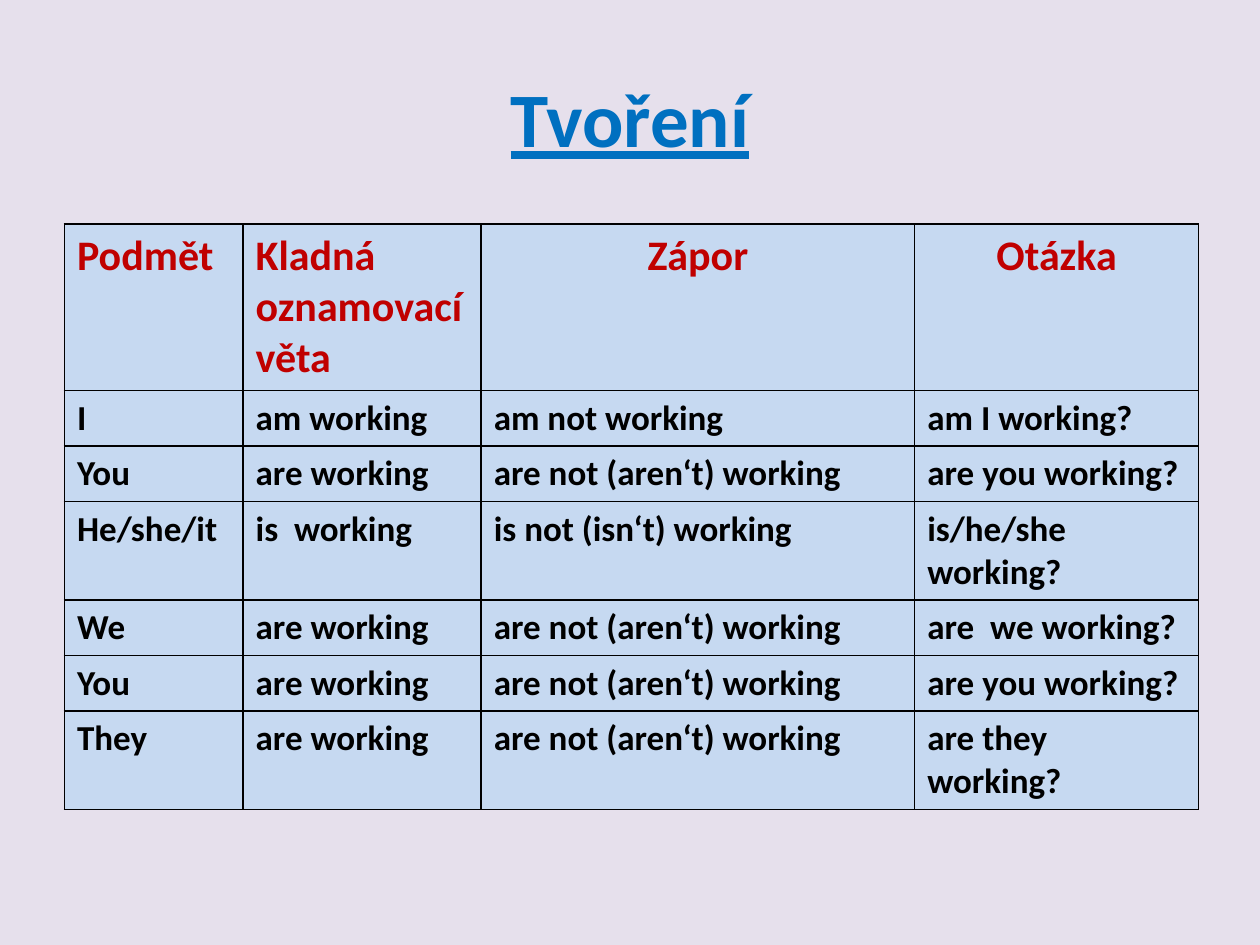
from lxml import etree
from pptx import Presentation
from pptx.dml.color import RGBColor
from pptx.enum import text as t
from pptx.oxml import ns
from pptx.util import Cm, Pt

TITLE = "Tvoření"
HEAD = ["Podmět", "Kladná oznamovací věta", "Zápor", "Otázka"]
BODY = [
    ["I", "am working", "am not working", "am I working?"],
    ["You", "are working", "are not (aren‘t) working", "are you working?"],
    ["He/she/it", "is  working", "is not (isn‘t) working", "is/he/she working?"],
    ["We", "are working", "are not (aren‘t) working", "are  we working?"],
    ["You", "are working", "are not (aren‘t) working", "are you working?"],
    ["They", "are working", "are not (aren‘t) working", "are they working?"],
]
WIDTHS = [3.6, 4.8, 8.74, 5.72]
ROW = 1.04
MID = t.PP_ALIGN.CENTER
LEFT = t.PP_ALIGN.LEFT
ALIGN = [LEFT, LEFT, MID, MID]

BACK = RGBColor(0xE6, 0xE0, 0xEC)
BLUE = RGBColor(0x00, 0x70, 0xC0)
RED = RGBColor(0xC0, 0x00, 0x00)
BLACK = RGBColor(0x00, 0x00, 0x00)
PALE = RGBColor(0xC6, 0xD9, 0xF1)


def write(frame, words, size, color, align):
    par = frame.paragraphs[0]
    par.alignment = align
    run = par.add_run()
    run.text = words
    font = run.font
    font.name, font.size, font.bold = "Calibri", Pt(size), True
    font.color.rgb = color
    return font


def border(cell):
    props = cell._tc.get_or_add_tcPr()
    for side in ("lnL", "lnR", "lnT", "lnB"):
        line = etree.SubElement(props, ns.qn("a:" + side), w=str(Pt(1)))
        fill = etree.SubElement(line, ns.qn("a:solidFill"))
        etree.SubElement(fill, ns.qn("a:srgbClr"), val=str(BLACK))


def add_title(slide):
    title = slide.shapes.title
    title.left, title.top = Cm(1.27), Cm(0.76)
    title.width, title.height = Cm(22.86), Cm(3.18)
    title.text_frame.vertical_anchor = t.MSO_ANCHOR.MIDDLE
    write(title.text_frame, TITLE, 44, BLUE, MID).underline = True


def add_forms(slide):
    rows = [HEAD] + BODY
    table = slide.shapes.add_table(
        len(rows), len(HEAD), Cm(1.3), Cm(4.52),
        Cm(sum(WIDTHS)), Cm(ROW * len(rows))).table
    for col, width in zip(table.columns, WIDTHS):
        col.width = Cm(width)
    for r, row in enumerate(rows):
        table.rows[r].height = Cm(ROW)
        for c, words in enumerate(row):
            cell = table.cell(r, c)
            border(cell)
            cell.fill.solid()
            cell.fill.fore_color.rgb = PALE
            if r == 0:
                write(cell.text_frame, words, 24, RED, ALIGN[c])
            else:
                write(cell.text_frame, words, 20, BLACK, LEFT)


def main():
    deck = Presentation()
    deck.slide_width, deck.slide_height = Cm(25.4), Cm(19.05)
    slide = deck.slides.add_slide(deck.slide_layouts[5])
    slide.background.fill.solid()
    slide.background.fill.fore_color.rgb = BACK
    add_title(slide)
    add_forms(slide)
    deck.save("out.pptx")


if __name__ == "__main__":
    main()
